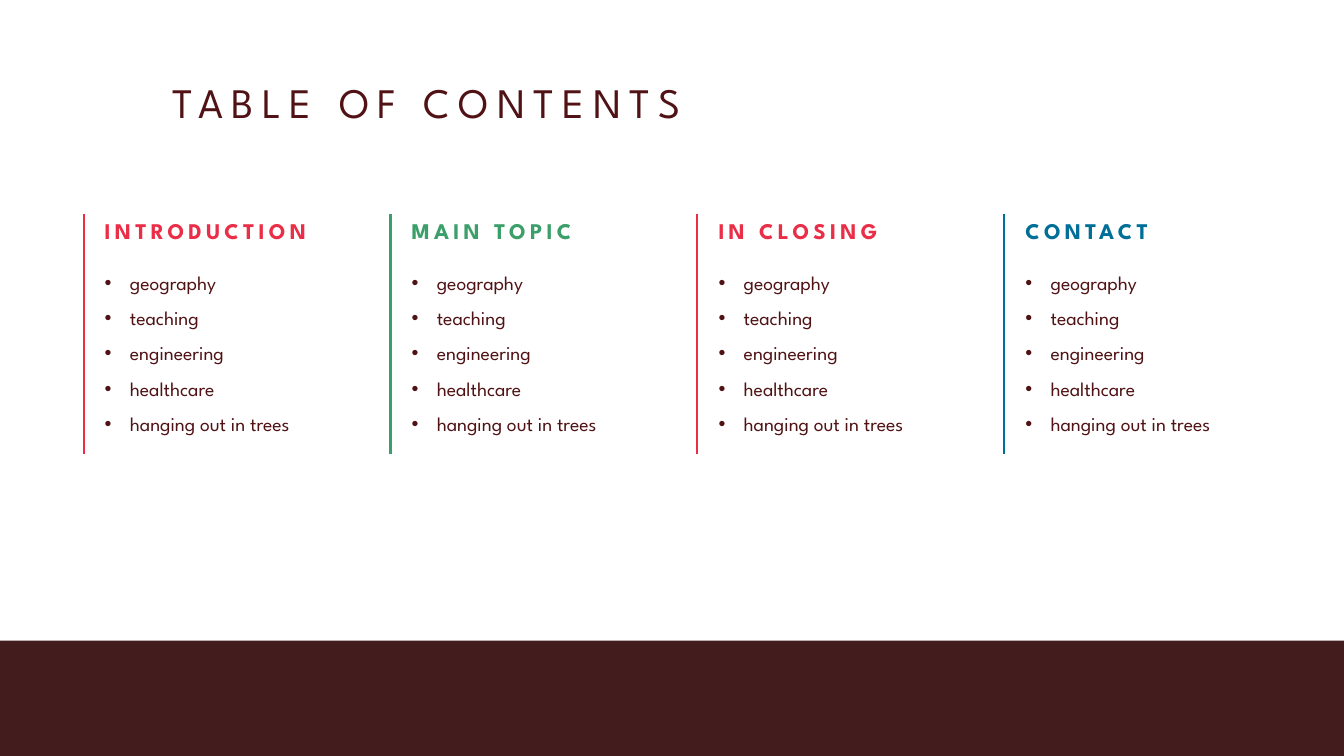
from lxml import etree
from pptx import Presentation
from pptx.dml.color import RGBColor
from pptx.enum.shapes import MSO_CONNECTOR, MSO_SHAPE
from pptx.oxml.ns import qn
from pptx.util import Inches, Pt

STRAIGHT = MSO_CONNECTOR.STRAIGHT
RECTANGLE = MSO_SHAPE.RECTANGLE

SLIDE_WIDTH, SLIDE_HEIGHT = 26.67, 15
FONT = "League Spartan"
DARK, MAROON = "501214", "431C1D"
RED, GREEN, BLUE = "EB2E47", "3A9F68", "006F98"
TOPICS = ["geography", "teaching", "engineering", "healthcare", "hanging out in trees"]
SECTIONS = [
    ("INTRODUCTION", RED),
    ("MAIN TOPIC", GREEN),
    ("IN CLOSING", RED),
    ("CONTACT", BLUE),
]
COLUMN_LEFT, COLUMN_TOP, COLUMN_STEP = 1.66, 4.25, 6.09
COLUMN_HEIGHT = 4.75


def color(hex_value):
    return RGBColor.from_string(hex_value)


def add_text_frame(slide, left, top, width, height):
    box = slide.shapes.add_textbox(Inches(left), Inches(top), Inches(width), Inches(height))
    box.text_frame.word_wrap = True
    return box.text_frame


def add_run(paragraph, text, size, hex_value, bold=False, spacing=0):
    """Add a run; spacing is the letter spacing in points."""
    run = paragraph.add_run()
    run.text = text
    run.font.name = FONT
    run.font.size = Pt(size)
    run.font.bold = bold
    run.font.color.rgb = color(hex_value)
    if spacing:
        run.font._element.set("spc", str(spacing * 100))


def add_bullet(paragraph):
    properties = paragraph._p.get_or_add_pPr()
    properties.set("marL", str(Inches(0.5)))
    properties.set("indent", str(Inches(-0.5)))
    etree.SubElement(properties, qn("a:buFont")).set("typeface", "Arial")
    etree.SubElement(properties, qn("a:buChar")).set("char", "•")


def add_title(slide, left, top, width, height):
    frame = add_text_frame(slide, left, top, width, height)
    add_run(frame.paragraphs[0], "TABLE OF CONTENTS", 60, DARK, spacing=12)


def add_rule(slide, left, top, height, hex_value):
    rule = slide.shapes.add_connector(
        STRAIGHT, Inches(left), Inches(top), Inches(left), Inches(top + height))
    rule.line.color.rgb = color(hex_value)
    rule.line.width = Pt(3)
    etree.SubElement(rule._element.spPr, qn("a:effectLst"))


def add_section(slide, left, top, height, heading, hex_value):
    """Add a coloured rule with a heading and a bulleted list to its right."""
    text_left, text_width = left + 0.32, 4.75
    frame = add_text_frame(slide, text_left, top, text_width, 0.64)
    add_run(frame.paragraphs[0], heading, 32, hex_value, bold=True, spacing=6)

    frame = add_text_frame(slide, text_left, top + 0.84, text_width, 3.58)
    for index, topic in enumerate(TOPICS):
        paragraph = frame.add_paragraph() if index else frame.paragraphs[0]
        add_bullet(paragraph)
        paragraph.line_spacing = 1.5
        add_run(paragraph, topic, 28, DARK)

    add_rule(slide, left, top, height, hex_value)


def add_footer_band(slide, top):
    band = slide.shapes.add_shape(
        RECTANGLE, 0, Inches(top), Inches(SLIDE_WIDTH), Inches(SLIDE_HEIGHT - top))
    band.shadow.inherit = False
    band.fill.solid()
    band.fill.fore_color.rgb = color(MAROON)
    band.line.fill.background()


def main():
    presentation = Presentation()
    presentation.slide_width = Inches(SLIDE_WIDTH)
    presentation.slide_height = Inches(SLIDE_HEIGHT)
    slide = presentation.slides.add_slide(presentation.slide_layouts[6])
    slide.background.fill.solid()
    slide.background.fill.fore_color.rgb = color("FFFFFF")

    add_footer_band(slide, 12.71)
    add_title(slide, 3.33, 1.47, 14.02, 1.11)
    for index, (heading, hex_value) in enumerate(SECTIONS):
        left = COLUMN_LEFT + index * COLUMN_STEP
        add_section(slide, left, COLUMN_TOP, COLUMN_HEIGHT, heading, hex_value)

    presentation.save("out.pptx")


if __name__ == "__main__":
    main()
